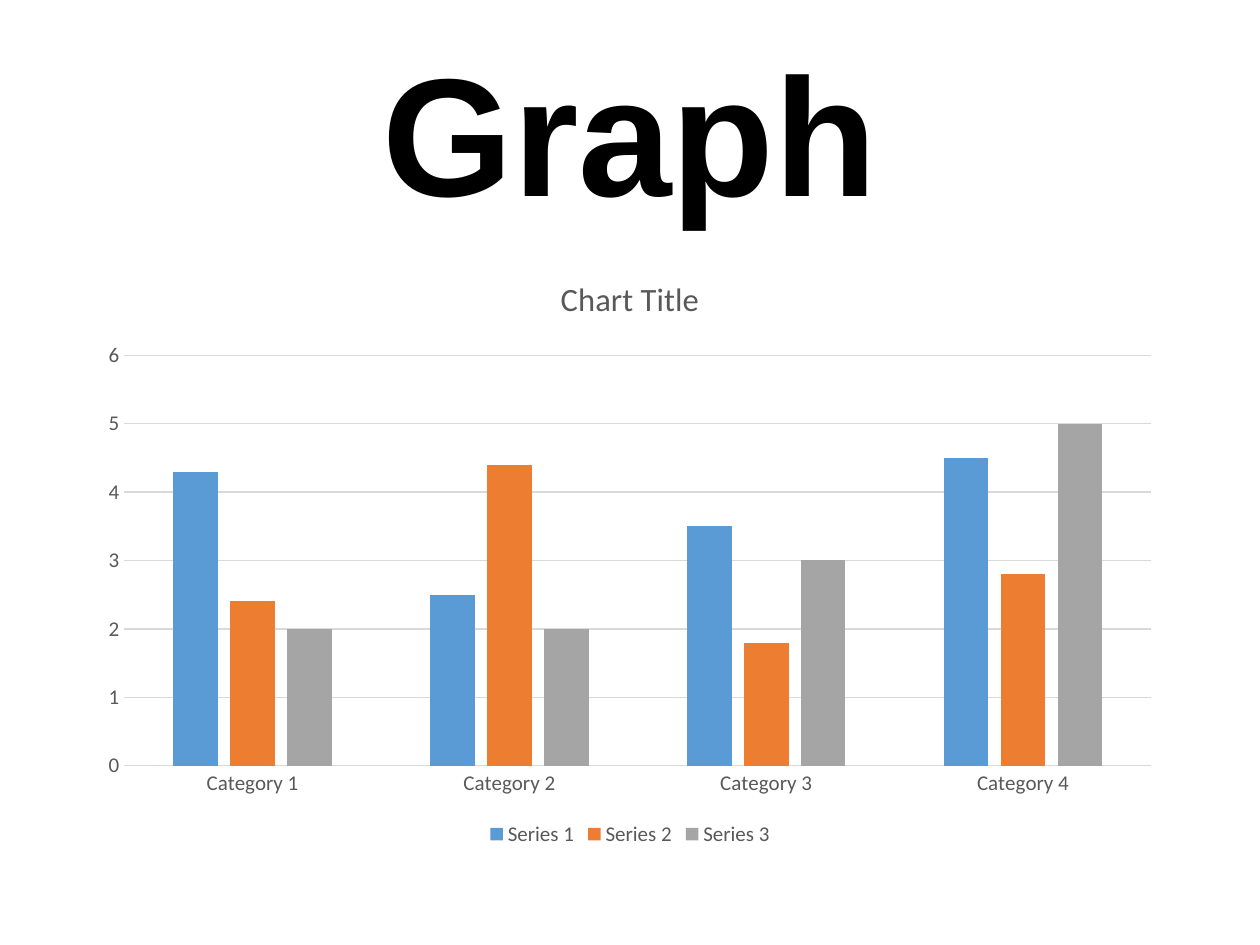
import pptx
import pptx.chart.data
import pptx.dml.color
import pptx.enum.chart
import pptx.enum.text
import pptx.util
from pptx.util import Cm

COLORS = {
    "title": "000000", "label": "595959", "grid": "D9D9D9",
    "Series 1": "5B9BD5", "Series 2": "ED7D31", "Series 3": "A5A5A5",
}
CATEGORIES = [f"Category {n}" for n in range(1, 5)]
SERIES = {
    "Series 1": (4.3, 2.5, 3.5, 4.5),
    "Series 2": (2.4, 4.4, 1.8, 2.8),
    "Series 3": (2, 2, 3, 5),
}


def rgb(name):
    return pptx.dml.color.RGBColor.from_string(COLORS[name])


class SlideBuilder:
    LEFT, WIDTH = Cm(1.75), Cm(21.9)
    TITLE_FONT = {"name": "Arial", "size": pptx.util.Pt(96), "bold": True}
    LABEL_FONT = {"name": "Calibri", "size": pptx.util.Pt(12), "bold": False}
    CHART_TITLE_FONT = {**LABEL_FONT, "size": pptx.util.Pt(18.6)}

    def __init__(self, s):
        self.s = s

    def set_font(self, font, values, color):
        for key, value in values.items():
            setattr(font, key, value)
        font.color.rgb = rgb(color)

    def set_line(self, line):
        line.color.rgb = rgb("grid")
        line.width = pptx.util.Pt(0.75)

    def title(self, text, top, height):
        sp = self.s.shapes.title
        sp.left, sp.top, sp.width, sp.height = self.LEFT, top, self.WIDTH, height
        tf = sp.text_frame
        tf.auto_size = pptx.enum.text.MSO_AUTO_SIZE.NONE
        tf.vertical_anchor = pptx.enum.text.MSO_ANCHOR.MIDDLE
        p = tf.paragraphs[0]
        p.alignment = pptx.enum.text.PP_ALIGN.CENTER
        p.line_spacing = 0.9
        r = p.add_run()
        r.text = text
        self.set_font(r.font, self.TITLE_FONT, "title")

    def column_chart(self, title, top, height):
        data = pptx.chart.data.CategoryChartData()
        data.categories = CATEGORIES
        for name, values in SERIES.items():
            data.add_series(name, values)
        chart = self.s.shapes.add_chart(
            pptx.enum.chart.XL_CHART_TYPE.COLUMN_CLUSTERED,
            self.LEFT, top, self.WIDTH, height, data).chart
        self.set_font(chart.font, self.LABEL_FONT, "label")

        # Chart title and legend
        p = chart.chart_title.text_frame.paragraphs[0]
        r = p.add_run()
        r.text = title
        self.set_font(r.font, self.CHART_TITLE_FONT, "label")
        chart.chart_title.include_in_layout = False
        chart.has_legend = True
        chart.legend.position = pptx.enum.chart.XL_LEGEND_POSITION.BOTTOM
        chart.legend.include_in_layout = False
        self.set_font(chart.legend.font, self.LABEL_FONT, "label")

        # Columns
        plot = chart.plots[0]
        plot.gap_width, plot.overlap = 219, -27
        plot.vary_by_categories = False
        for series in plot.series:
            series.format.fill.solid()
            series.format.fill.fore_color.rgb = rgb(series.name)

        # Axes and gridlines
        for axis in (chart.category_axis, chart.value_axis):
            axis.major_tick_mark = pptx.enum.chart.XL_TICK_MARK.NONE
            axis.minor_tick_mark = pptx.enum.chart.XL_TICK_MARK.NONE
            self.set_font(axis.tick_labels.font, self.LABEL_FONT, "label")
        self.set_line(chart.category_axis.format.line)
        chart.value_axis.format.line.fill.background()
        chart.value_axis.has_major_gridlines = True
        self.set_line(chart.value_axis.major_gridlines.format.line)


def main():
    prs = pptx.Presentation()
    prs.slide_width, prs.slide_height = Cm(25.4), Cm(19.05)
    builder = SlideBuilder(prs.slides.add_slide(prs.slide_layouts[5]))
    builder.title("Graph", Cm(1.02), Cm(3.68))
    builder.column_chart("Chart Title", Cm(5.08), Cm(12.09))
    prs.save("out.pptx")


if __name__ == "__main__":
    main()
